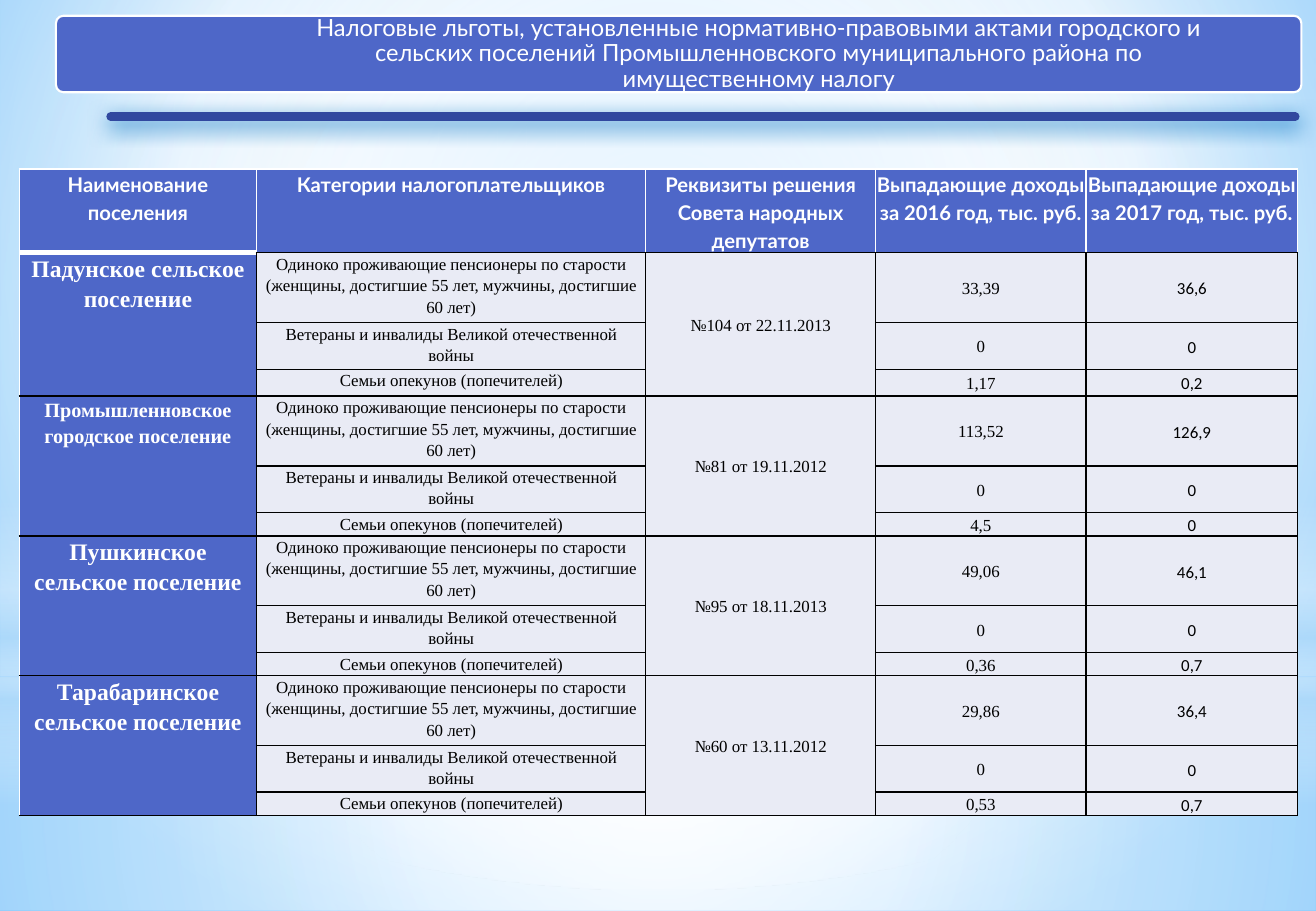
import lxml.etree
import pptx
import pptx.dml.color
import pptx.enum.shapes
import pptx.enum.text
import pptx.oxml.ns
import pptx.util

WIDTH, HEIGHT = 10.83, 7.5
COLORS = {"white": "FFFFFF", "black": "000000", "indigo": "4E67C8", "rule": "31489F",
          "shadow": "0070C0", "cell": "E9EBF5", "pale": "B4DCFA",
          "sky": "9ED5FF", "azure": "5BB9FF"}
SHAPES = pptx.enum.shapes.MSO_SHAPE
ANCHOR = pptx.enum.text.MSO_ANCHOR
qn = pptx.oxml.ns.qn

TITLE = ("Налоговые льготы, установленные нормативно-правовыми актами городского и "
         "сельских поселений Промышленновского муниципального района по имущественному налогу")
HEADERS = ["Наименование поселения", "Категории налогоплательщиков",
           "Реквизиты решения Совета народных депутатов",
           "Выпадающие доходы за 2016 год, тыс. руб.",
           "Выпадающие доходы за 2017 год, тыс. руб."]
CATEGORIES = ["Одиноко проживающие пенсионеры по старости "
              "(женщины, достигшие 55 лет, мужчины, достигшие 60 лет)",
              "Ветераны и инвалиды Великой отечественной войны",
              "Семьи опекунов (попечителей)"]
# name, name size, decision, losses of 2016, losses of 2017
SETTLEMENTS = [
    ("Падунское сельское поселение", 14, "№104 от 22.11.2013",
     ["33,39", "0", "1,17"], ["36,6", "0", "0,2"]),
    ("Промышленновское городское поселение", 12, "№81 от 19.11.2012",
     ["113,52", "0", "4,5"], ["126,9", "0", "0"]),
    ("Пушкинское сельское поселение", 14, "№95 от 18.11.2013",
     ["49,06", "0", "0,36"], ["46,1", "0", "0,7"]),
    ("Тарабаринское сельское поселение", 14, "№60 от 13.11.2012",
     ["29,86", "0", "0,53"], ["36,4", "0", "0,7"]),
]
COLUMNS = [1.95, 3.2, 1.89, 1.73, 1.74]
HEADER_HEIGHT = 0.69
CATEGORY_HEIGHTS = [0.53, 0.35, 0.19]


def rgb(name):
    return pptx.dml.color.RGBColor.from_string(COLORS[name])


def inches(box):
    return [pptx.util.Inches(length) for length in box]


def add_color(parent, name, opacity=100):
    color = lxml.etree.SubElement(parent, qn("a:srgbClr"), val=COLORS[name])
    if opacity < 100:
        lxml.etree.SubElement(color, qn("a:alpha"), val=str(opacity * 1000))


def set_gradient(properties, stops, focus=None):
    """Swap a solid fill for a gradient: circular around focus, else top to bottom."""
    gradient = lxml.etree.Element(qn("a:gradFill"), rotWithShape="1")
    stop_list = lxml.etree.SubElement(gradient, qn("a:gsLst"))
    for position, name, opacity in stops:
        stop = lxml.etree.SubElement(stop_list, qn("a:gs"), pos=str(position * 1000))
        add_color(stop, name, opacity)
    if focus:
        circle = lxml.etree.SubElement(gradient, qn("a:path"))
        circle.set("path", "circle")
        lxml.etree.SubElement(circle, qn("a:fillToRect"),
                              {side: str(share * 1000) for side, share in zip("ltrb", focus)})
    else:
        lxml.etree.SubElement(gradient, qn("a:lin"), ang="5400000", scaled="0")
    properties.replace(properties.find(qn("a:solidFill")), gradient)


def format_text(frame, text, size, font, color, bold=False, spacing=1.15):
    frame.text = text
    paragraph = frame.paragraphs[0]
    paragraph.alignment = pptx.enum.text.PP_ALIGN.CENTER
    paragraph.line_spacing = spacing
    run_font = paragraph.runs[0].font
    run_font.size, run_font.name, run_font.bold = pptx.util.Pt(size), font, bold
    run_font.color.rgb = rgb(color)


def add_plain_shape(slide, preset, box, color):
    shape = slide.shapes.add_shape(preset, *inches(box))
    shape.shadow.inherit = False
    shape.fill.solid()
    shape.fill.fore_color.rgb = rgb(color)
    shape.line.fill.background()
    return shape


def add_backdrop(slide, width, height):
    slide.background.fill.solid()
    slide.background.fill.fore_color.rgb = rgb("sky")
    set_gradient(slide.element.find(".//" + qn("p:bgPr")),
                 [(0, "sky", 100), (60, "white", 100), (100, "azure", 100)], (20, 10, 20, 60))
    center = (50, 50, 50, 50)
    horizon = 0.744
    layers = [
        (SHAPES.RECTANGLE, horizon, 1 - horizon, center,
         [(0, "white", 91), (37, "white", 76), (100, "pale", 79)]),
        (SHAPES.RECTANGLE, 0, horizon, center,
         [(0, "white", 89), (48, "white", 62), (100, "pale", 79)]),
        (SHAPES.RECTANGLE, 0.55, 0.333, None,
         [(0, "white", 0), (29, "white", 30), (45, "pale", 40),
          (55, "white", 26), (65, "pale", 60), (100, "white", 0)]),
        (SHAPES.OVAL, 0.233, horizon, center, [(0, "white", 100), (56, "white", 0)]),
    ]
    for preset, top, share, focus, stops in layers:
        layer = add_plain_shape(slide, preset, (0, top * height, width, share * height), "white")
        set_gradient(layer.element.spPr, stops, focus)


def add_title(slide, box):
    left, top, width, height = box
    banner = add_plain_shape(slide, SHAPES.ROUNDED_RECTANGLE, box, "indigo")
    banner.adjustments[0] = 0.1
    banner.line.color.rgb = rgb("white")
    banner.line.width = pptx.util.Pt(1.25)
    indent = width * 0.206
    title = slide.shapes.add_textbox(*inches((left + indent, top, width - indent, height)))
    frame = title.text_frame
    frame.word_wrap = True
    frame.vertical_anchor = ANCHOR.MIDDLE
    frame.margin_left, frame.margin_top, frame.margin_right, frame.margin_bottom = inches(
        (0, 0.06, 0.79, 0.06))
    format_text(frame, TITLE, 14, "Lato", "white", spacing=0.9)


def add_rule(slide, left, right, y):
    rule = slide.shapes.add_connector(pptx.enum.shapes.MSO_CONNECTOR.STRAIGHT,
                                      *inches((left, y, right, y)))
    rule.line.color.rgb = rgb("rule")
    rule.line.width = pptx.util.Pt(5)
    properties = rule.element.spPr
    properties.find(qn("a:ln")).set("cap", "rnd")
    effects = lxml.etree.SubElement(properties, qn("a:effectLst"))
    shadow = lxml.etree.SubElement(effects, qn("a:outerShdw"), blurRad=str(pptx.util.Pt(12)),
                                   dist=str(pptx.util.Pt(4)), dir="5400000", rotWithShape="0")
    add_color(shadow, "shadow")


def style_cell(cell, fill, margin, borders):
    """Borders are (colour, points) for left, right, top and bottom."""
    cell.fill.solid()
    cell.fill.fore_color.rgb = rgb(fill)
    cell.margin_left = cell.margin_right = pptx.util.Inches(margin)
    cell.margin_top = cell.margin_bottom = 0
    properties = cell._tc.get_or_add_tcPr()
    for index, (side, (color, points)) in enumerate(zip("LRTB", borders)):
        border = lxml.etree.Element(qn("a:ln" + side), w=str(pptx.util.Pt(points)))
        add_color(lxml.etree.SubElement(border, qn("a:solidFill")), color)
        properties.insert(index, border)


def add_benefits_table(slide, left, top, width):
    group = len(CATEGORIES)
    heights = [HEADER_HEIGHT] + CATEGORY_HEIGHTS * len(SETTLEMENTS)
    heights[group] += 0.03
    table = slide.shapes.add_table(len(heights), len(COLUMNS),
                                   *inches((left, top, width, sum(heights)))).table
    for column, share in zip(table.columns, COLUMNS):
        column.width = pptx.util.Inches(width * share / sum(COLUMNS))
    for row, height in zip(table.rows, heights):
        row.height = pptx.util.Inches(height)

    white, black = ("white", 1), ("black", 1)
    for column, header in enumerate(HEADERS):
        bottom = black if column else ("white", 3)
        style_cell(table.cell(0, column), "indigo", 0.01, (white, white, white, bottom))
        format_text(table.cell(0, column).text_frame, header, 12, "Lato", "white", True)

    last = len(heights) - 1
    for row in range(1, len(heights)):
        style_cell(table.cell(row, 0), "indigo", 0.07,
                   (white, black, ("white", 3) if row == 1 else black,
                    white if row == last else black))
        for column in range(1, len(COLUMNS)):
            style_cell(table.cell(row, column), "cell", 0.07, [black] * 4)
            if column > 1:
                table.cell(row, column).vertical_anchor = ANCHOR.MIDDLE

    for index, (name, size, decision, *losses) in enumerate(SETTLEMENTS):
        first = 1 + index * group
        for column in (0, 2):
            table.cell(first, column).merge(table.cell(first + group - 1, column))
        format_text(table.cell(first, 0).text_frame, name, size, "Times New Roman", "white", True)
        format_text(table.cell(first, 2).text_frame, decision, 10, "Times New Roman", "black")
        for row, (category, *amounts) in enumerate(zip(CATEGORIES, *losses), first):
            for column, text, font in zip((1, 3, 4), (category, *amounts),
                                          ("Times New Roman", "Times New Roman", "Calibri")):
                format_text(table.cell(row, column).text_frame, text, 10, font, "black")


def main():
    deck = pptx.Presentation()
    deck.slide_width, deck.slide_height = inches((WIDTH, HEIGHT))
    slide = deck.slides.add_slide(deck.slide_layouts[6])
    add_backdrop(slide, WIDTH, HEIGHT)
    add_title(slide, (0.46, 0.13, 10.25, 0.63))
    add_rule(slide, 0.91, 10.66, 0.96)
    add_benefits_table(slide, 0.16, 1.39, 10.52)
    deck.save("out.pptx")


if __name__ == "__main__":
    main()
